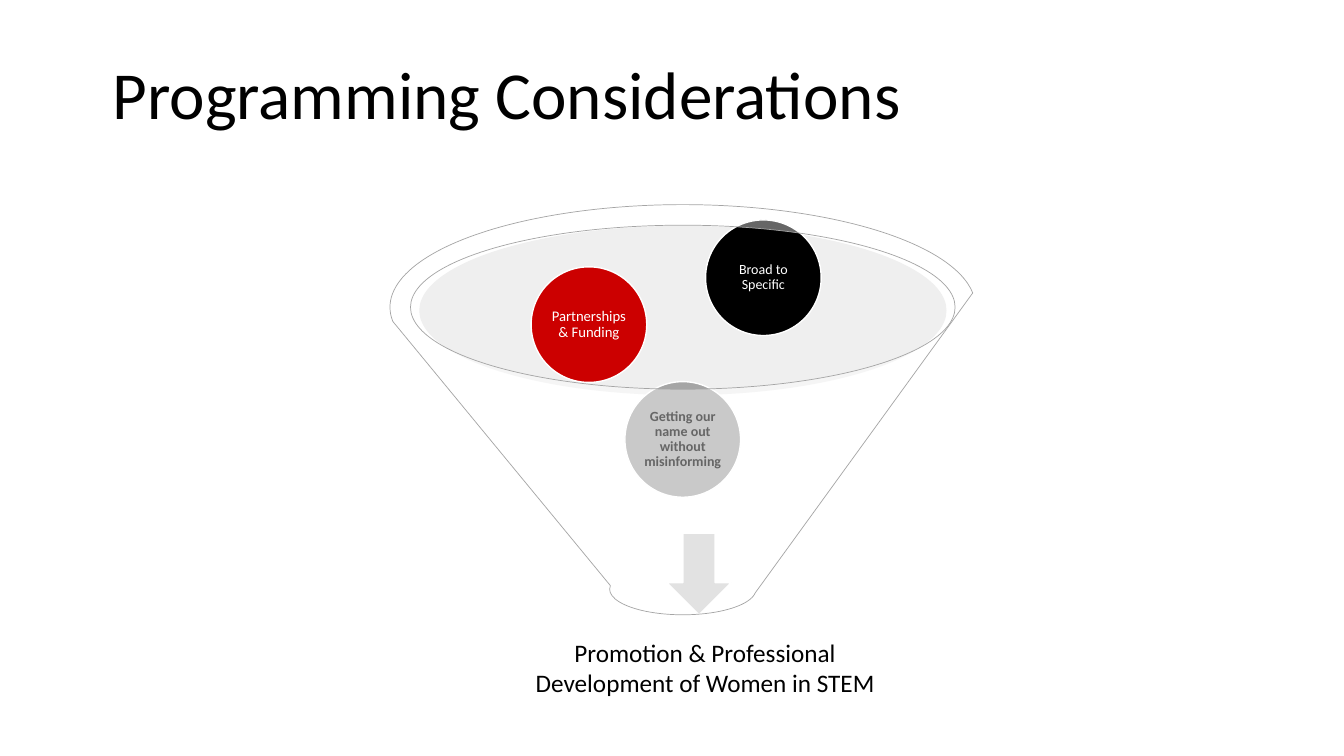
import pptx
import pptx.util
import pptx.dml.color
import pptx.enum.shapes
import pptx.enum.text
import pptx.oxml.ns
import lxml.etree

Pt = pptx.util.Pt
SHAPE = pptx.enum.shapes.MSO_SHAPE
ALIGN = pptx.enum.text.PP_ALIGN
ANCHOR = pptx.enum.text.MSO_ANCHOR

COLORS = {
    "black": "000000",
    "white": "FFFFFF",
    "red": "CC0000",
    "gray": "A5A5A5",
    "arrow": "CFCFCF",
    "opening": "D8D8D8",
}


def add_figure(kind, place, fill, line=None, width=1, opacity=100):
    shape = page.shapes.add_shape(kind, *[Pt(value) for value in place])
    shape.shadow.inherit = False
    shape.fill.solid()
    shape.fill.fore_color.rgb = pptx.dml.color.RGBColor.from_string(COLORS[fill])
    if opacity < 100:
        color = shape._element.spPr.find(".//" + pptx.oxml.ns.qn("a:srgbClr"))
        alpha = lxml.etree.SubElement(color, pptx.oxml.ns.qn("a:alpha"))
        alpha.set("val", str(opacity * 1000))
    if line:
        shape.line.color.rgb = pptx.dml.color.RGBColor.from_string(COLORS[line])
        shape.line.width = Pt(width)
    else:
        shape.line.fill.background()
    return shape


def write_text(box, text, size, color, align, anchor, spacing=1, bold=False):
    frame = box.text_frame
    frame.word_wrap = True
    frame.vertical_anchor = anchor
    para = frame.paragraphs[0]
    para.text = text
    para.alignment = align
    para.line_spacing = spacing
    para.font.name = "Calibri"
    para.font.size = Pt(size)
    para.font.bold = bold
    para.font.color.rgb = pptx.dml.color.RGBColor.from_string(COLORS[color])


deck = pptx.Presentation()
deck.slide_width = Pt(960)
deck.slide_height = Pt(540)
page = deck.slides.add_slide(deck.slide_layouts[6])

title = page.shapes.add_textbox(Pt(73.5), Pt(17.3), Pt(828), Pt(104.4))
write_text(title, "Programming Considerations", 48, "black", ALIGN.LEFT, ANCHOR.MIDDLE, 0.9)

add_figure(SHAPE.OVAL, (299.5, 161.3, 376.6, 121), "opening", opacity=40)
add_figure(SHAPE.DOWN_ARROW, (476.3, 380.9, 46, 58.3), "arrow", "white")

topics = [
    (446.4, 272.6, "gray", "Getting our name out without misinforming", 10, "black", True),
    (379.4, 190.6, "red", "Partnerships & Funding", 10.5, "white", False),
    (504, 157.1, "black", "Broad to Specific", 10, "white", False),
]
diameter = 82.6
for left, top, fill, text, size, color, bold in topics:
    circle = add_figure(SHAPE.OVAL, (left, top, diameter, diameter), fill, "white")
    frame = circle.text_frame
    frame.margin_left = frame.margin_right = Pt(1)
    frame.margin_top = frame.margin_bottom = Pt(1)
    write_text(circle, text, size, color, ALIGN.CENTER, ANCHOR.MIDDLE, 0.9, bold)

add_figure(SHAPE.FUNNEL, (278.6, 146.2, 418.3, 293), "white", "gray", 0.5, 40)

goal = page.shapes.add_textbox(Pt(370.8), Pt(451.4), Pt(265.7), Pt(72.7))
write_text(goal, "Promotion & Professional Development of Women in STEM", 18, "black", ALIGN.CENTER, ANCHOR.TOP)

deck.save("out.pptx")
